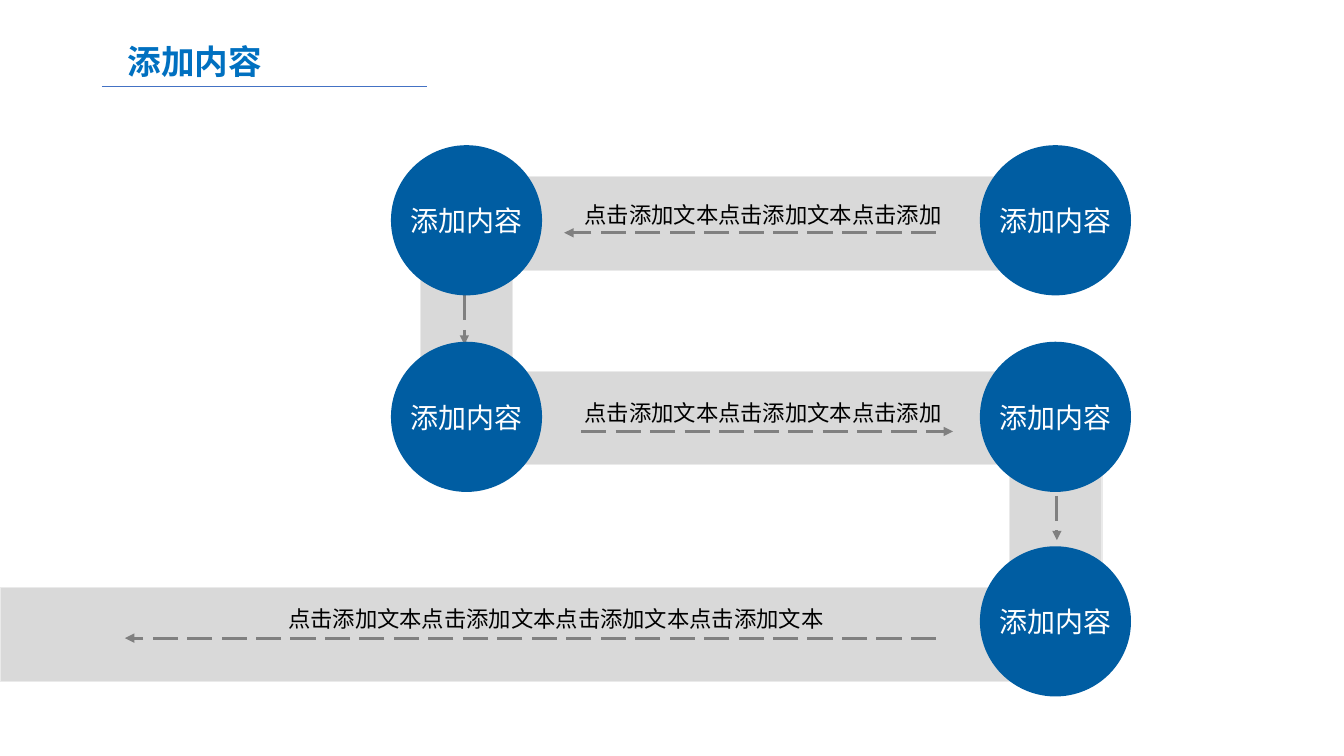
from pptx import Presentation
from pptx import util as u
from pptx.dml.color import RGBColor
from pptx.enum import dml, shapes, text
from pptx.oxml.ns import qn
from lxml import etree


def rgb(value):
    """Turn a hex string into a colour."""
    return RGBColor.from_string(value)


class Flow:
    """Hold the style and the current slide of the flow diagram."""

    FONT = "Noto Sans CJK SC"
    BLUE, TITLE, RULE = "005DA2", "0070C0", "4472C4"
    BAND, EDGE, ARROW = "D9D9D9", "EAEAEA", "808080"
    CIRCLE = (108, 107.3)

    def __init__(self, slide):
        """Keep the slide to draw on."""
        self.s = slide

    def set_text(self, sp, words, size, color, bold=False, spacing=1.0):
        """Set centred text in a shape and format it."""
        tf = sp.text_frame
        tf.text = words
        tf.vertical_anchor = text.MSO_ANCHOR.MIDDLE
        p = tf.paragraphs[0]
        p.alignment = text.PP_ALIGN.CENTER
        p.line_spacing = spacing
        r = p.runs[0]
        r.font.size, r.font.bold, r.font.name = u.Pt(size), bold, self.FONT
        r.font.color.rgb = rgb(color)
        latin = r._r.get_or_add_rPr().find(qn("a:latin"))
        latin.addnext(etree.Element(qn("a:ea"), typeface=self.FONT))
        return tf

    def title(self, words, x, y, w, h):
        """Move and fill the title placeholder."""
        sp = self.s.shapes.title
        sp.left, sp.top, sp.width, sp.height = map(u.Pt, (x, y, w, h))
        tf = self.set_text(sp, words, 24, self.TITLE, bold=True)
        tf.word_wrap = False
        tf.auto_size = text.MSO_AUTO_SIZE.NONE

    def shape(self, kind, x, y, w, h, fill):
        """Add a filled preset shape without shadow."""
        sp = self.s.shapes.add_shape(kind, *map(u.Pt, (x, y, w, h)))
        sp.shadow.inherit = False
        sp.fill.solid()
        sp.fill.fore_color.rgb = rgb(fill)
        return sp

    def band(self, x, y, w, h):
        """Add a grey band that joins circles."""
        sp = self.shape(shapes.MSO_SHAPE.RECTANGLE, x, y, w, h, self.BAND)
        sp.line.color.rgb = rgb(self.EDGE)
        sp.line.width = u.Pt(0.75)

    def circle(self, words, x, y):
        """Add a blue circle with its label."""
        sp = self.shape(shapes.MSO_SHAPE.OVAL, x, y, *self.CIRCLE, self.BLUE)
        sp.line.fill.background()
        self.set_text(sp, words, 20, "FFFFFF").word_wrap = False

    def caption(self, words, x, y, w):
        """Add a caption above an arrow."""
        sp = self.s.shapes.add_textbox(*map(u.Pt, (x, y, w, 36)))
        tf = self.set_text(sp, words, 16, "000000", spacing=1.5)
        tf.word_wrap = True
        tf.auto_size = text.MSO_AUTO_SIZE.SHAPE_TO_FIT_TEXT

    def line(self, x1, y1, x2, y2, color, width):
        """Add a straight line without shadow."""
        c = self.s.shapes.add_connector(
            shapes.MSO_CONNECTOR.STRAIGHT, *map(u.Pt, (x1, y1, x2, y2)))
        c.line.color.rgb = rgb(color)
        c.line.width = u.Pt(width)
        etree.SubElement(c.element.spPr, qn("a:effectLst"))
        return c

    def arrow(self, x1, y1, x2, y2):
        """Add a dashed arrow."""
        c = self.line(x1, y1, x2, y2, self.ARROW, 2.25)
        c.line.dash_style = dml.MSO_LINE.LONG_DASH
        ln = c.element.spPr.find(qn("a:ln"))
        etree.SubElement(ln, qn("a:tailEnd"), type="triangle")


def main():
    """Build the slide and save it."""
    prs = Presentation()
    prs.slide_width, prs.slide_height = u.Pt(960.5), u.Pt(540)
    flow = Flow(prs.slides.add_slide(prs.slide_layouts[5]))
    label, phrase = "添加内容", "点击添加文本"
    left, right = 279.4, 700.3
    top, middle, bottom = 103.7, 244.1, 390.2

    flow.title(label, 83.5, 25.9, 111.6, 36)
    flow.line(72.9, 61.9, 305.5, 61.9, flow.RULE, 0.5)

    for box in ((721.4, 265.7, 66.2, 205.9), (0, 419.8, 752.4, 67),
                (325.4, 265.7, 460.8, 66.2), (363.6, 126, 423.4, 67),
                (300.2, 126, 66.2, 205.9)):
        flow.band(*box)

    for ends in ((668.9, 166.3, 403.2, 166.3), (331.9, 211, 331.9, 246.2),
                 (415.4, 308.2, 681.1, 308.2), (755.3, 354.2, 755.3, 385.9),
                 (668.9, 455.8, 89.3, 455.8)):
        flow.arrow(*ends)

    for x, y in ((right, top), (left, top), (left, middle),
                 (right, middle), (right, bottom)):
        flow.circle(label, x, y)

    for y in (130.3, 272.2):
        flow.caption(phrase * 2 + "点击添加", 405.4, y, 280)
    flow.caption(phrase * 4, 126, 419, 542.9)

    prs.save("out.pptx")


if __name__ == "__main__":
    main()
